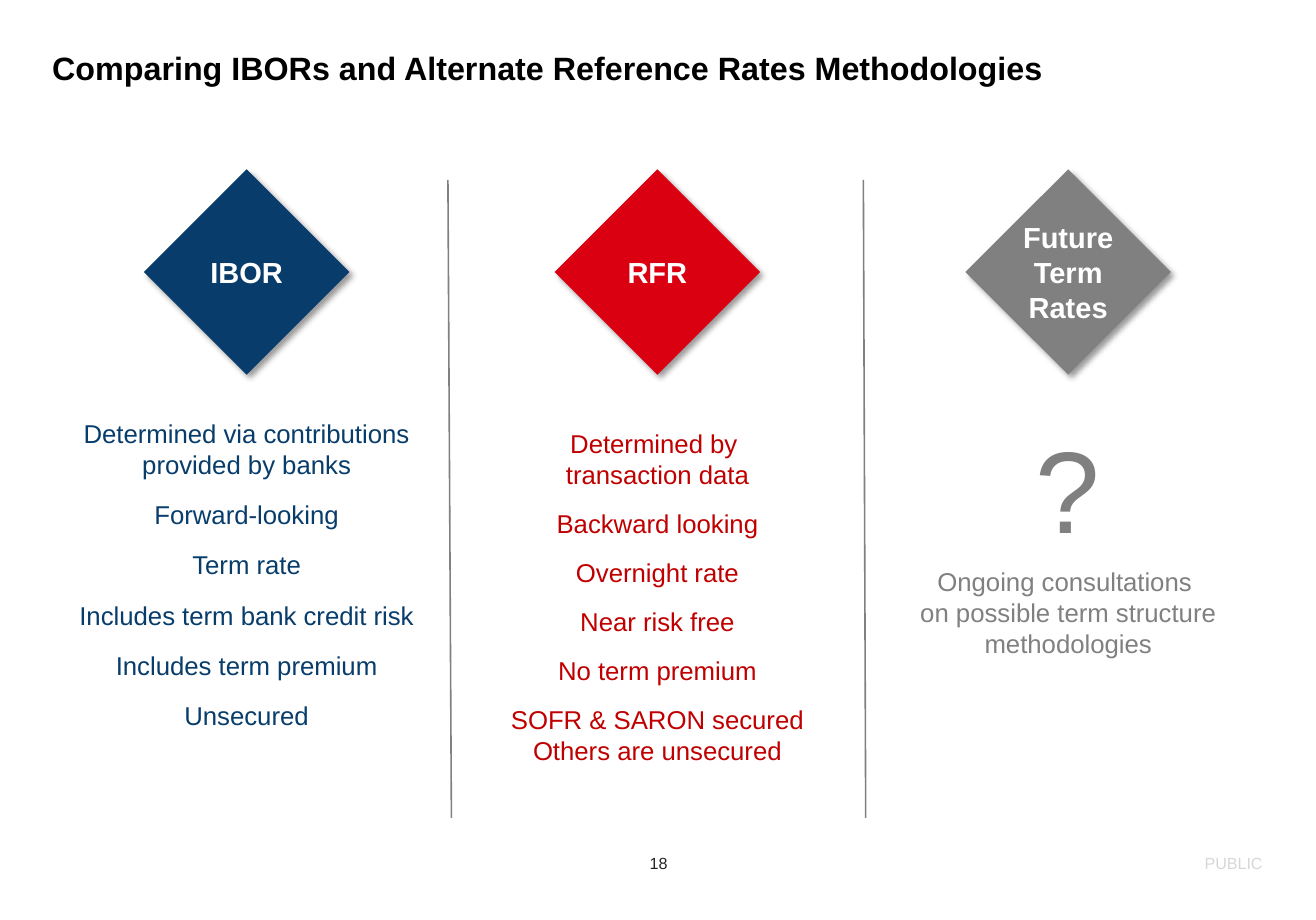
from dataclasses import dataclass

from lxml.etree import SubElement
from pptx import Presentation
from pptx.dml.color import RGBColor
from pptx.enum.shapes import MSO_CONNECTOR, MSO_SHAPE
from pptx.enum.text import MSO_ANCHOR as Anchor, PP_ALIGN as Align
from pptx.oxml.ns import qn
from pptx.slide import Slide
from pptx.text.text import TextFrame
from pptx.util import Inches, Pt

NAVY = RGBColor(0x08, 0x3D, 0x6B)
RED = RGBColor(0xDB, 0x00, 0x11)
DARK_RED = RGBColor(0xC0, 0x00, 0x00)
GRAY = RGBColor(0x80, 0x80, 0x80)
PALE_GRAY = RGBColor(0xD7, 0xD8, 0xD6)
CHARCOAL = RGBColor(0x25, 0x25, 0x25)
BLACK = RGBColor(0, 0, 0)
WHITE = RGBColor(0xFF, 0xFF, 0xFF)

FONT = "Arial"
MARGIN = 0.45
CONTENT_W = 10.43
COLUMN_W, COLUMN_TOP, COLUMN_H = 3.35, 3.6, 1.97
COLUMN_PITCH = (CONTENT_W - COLUMN_W) / 2
DIAMOND, DIAMOND_TOP = 1.77, 1.46
DIVIDER_TOP, DIVIDER_BOTTOM = 1.55, 7.05
DIVIDERS = [(3.86, 3.89), (7.44, 7.46)]


@dataclass
class Para:
    text: str
    size: float = 16
    before: float = 0
    bold: bool = False
    spacing: float = 1.0


@dataclass
class Column:
    heading: str
    fill: RGBColor
    color: RGBColor
    paras: list[Para]
    inset: float = 0
    heading_inset: float = 0


@dataclass
class Label:
    para: Para
    left: float
    top: float
    width: float
    height: float
    color: RGBColor
    align: Align
    anchor: Anchor = Anchor.MIDDLE


def points(texts: list[str], before: float) -> list[Para]:
    return [Para(text, before=before if i else 0) for i, text in enumerate(texts)]


COLUMNS = [
    Column("IBOR", NAVY, NAVY, points([
        "Determined via contributions provided by banks",
        "Forward-looking",
        "Term rate",
        "Includes term bank credit risk",
        "Includes term premium",
        "Unsecured",
    ], 12), heading_inset=0.03),
    Column("RFR", RED, DARK_RED, points([
        "Determined by \ntransaction data",
        "Backward looking",
        "Overnight rate",
        "Near risk free",
        "No term premium",
        "SOFR & SARON secured\nOthers are unsecured",
    ], 11.2), inset=0.09),
    Column("Future Term Rates", GRAY, GRAY, [
        Para("?", 72),
        Para("Ongoing consultations \non possible term structure methodologies", before=5.6),
    ]),
]

LABELS = [
    Label(Para("Comparing IBORs and Alternate Reference Rates Methodologies", 20, bold=True, spacing=0.9),
          MARGIN, 0.45, CONTENT_W, 0.27, BLACK, Align.LEFT, Anchor.TOP),
    Label(Para("18", 10), 5.58, 7.34, 0.19, 0.19, CHARCOAL, Align.CENTER),
    Label(Para("PUBLIC", 10), 8.35, 7.34, 2.53, 0.19, PALE_GRAY, Align.RIGHT),
]


def fill_text(tf: TextFrame, paras: list[Para], color: RGBColor, align: Align,
              anchor: Anchor, inset: float = 0) -> None:
    tf.word_wrap = True
    tf.vertical_anchor = anchor
    tf.margin_left = tf.margin_right = tf.margin_top = tf.margin_bottom = Inches(inset)
    for i, para in enumerate(paras):
        p = tf.add_paragraph() if i else tf.paragraphs[0]
        p.alignment = align
        p.line_spacing = para.spacing
        p.space_before = Pt(para.before)
        for j, line in enumerate(para.text.split("\n")):
            if j:
                p.add_line_break()
            r = p.add_run()
            r.text = line
            r.font.name = FONT
            r.font.size = Pt(para.size)
            r.font.bold = para.bold
            r.font.color.rgb = color


def add_label(s: Slide, label: Label) -> None:
    box = s.shapes.add_textbox(Inches(label.left), Inches(label.top),
                               Inches(label.width), Inches(label.height))
    fill_text(box.text_frame, [label.para], label.color, label.align, label.anchor)


def add_column(s: Slide, column: Column, left: float) -> None:
    sp = s.shapes.add_shape(MSO_SHAPE.DIAMOND, Inches(left + (COLUMN_W - DIAMOND) / 2),
                            Inches(DIAMOND_TOP), Inches(DIAMOND), Inches(DIAMOND))
    sp.fill.solid()
    sp.fill.fore_color.rgb = column.fill
    sp.line.fill.background()
    sp.shadow.inherit = False
    effects = sp.element.spPr.find(qn("a:effectLst"))
    shadow = SubElement(effects, qn("a:outerShdw"), blurRad=str(Pt(4)), dist=str(Pt(3)),
                        dir="2700000", algn="tl", rotWithShape="0")
    black = SubElement(shadow, qn("a:srgbClr"), val="000000")
    SubElement(black, qn("a:alpha"), val="40000")
    fill_text(sp.text_frame, [Para(column.heading, 18, bold=True)], WHITE,
              Align.CENTER, Anchor.MIDDLE, column.heading_inset)
    box = s.shapes.add_textbox(Inches(left), Inches(COLUMN_TOP), Inches(COLUMN_W), Inches(COLUMN_H))
    fill_text(box.text_frame, column.paras, column.color, Align.CENTER, Anchor.TOP, column.inset)


def add_divider(s: Slide, top_x: float, bottom_x: float) -> None:
    line = s.shapes.add_connector(MSO_CONNECTOR.STRAIGHT, Inches(top_x), Inches(DIVIDER_TOP),
                                  Inches(bottom_x), Inches(DIVIDER_BOTTOM))
    line.line.color.rgb = GRAY
    line.line.width = Pt(1)
    SubElement(line.element.spPr, qn("a:effectLst"))


def main() -> None:
    prs = Presentation()
    prs.slide_width, prs.slide_height = Inches(11.34), Inches(7.93)
    s = prs.slides.add_slide(prs.slide_layouts[6])
    for label in LABELS:
        add_label(s, label)
    for i, column in enumerate(COLUMNS):
        add_column(s, column, MARGIN + i * COLUMN_PITCH)
    for top_x, bottom_x in DIVIDERS:
        add_divider(s, top_x, bottom_x)
    prs.save("out.pptx")


if __name__ == "__main__":
    main()
